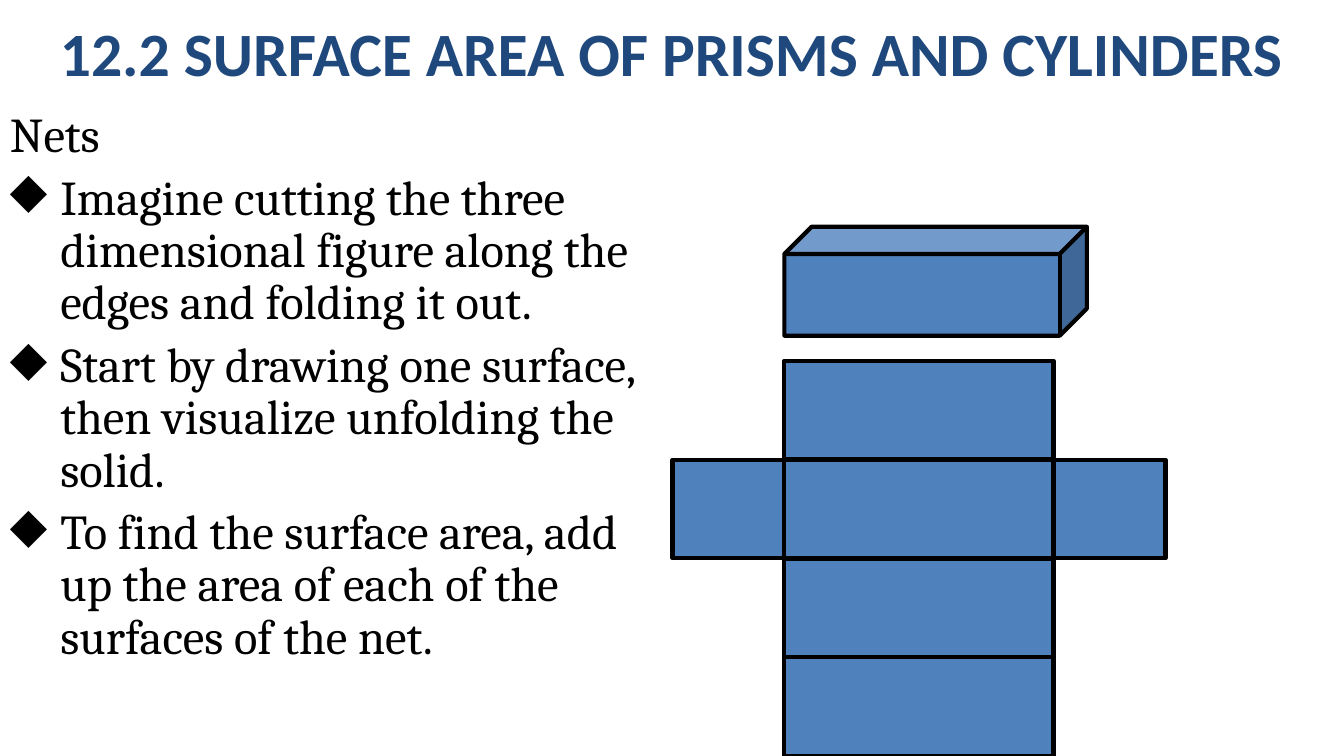
from lxml import etree
from pptx import Presentation
from pptx.dml.color import RGBColor
from pptx.enum.shapes import MSO_SHAPE as Preset
from pptx.enum.text import MSO_ANCHOR as Anchor, PP_ALIGN as Align
from pptx.oxml.ns import qn
from pptx.util import Inches, Pt

COLORS = {"title": "1F497D", "text": "000000", "face": "4F81BD", "edge": "000000"}
TITLE = "12.2 SURFACE AREA OF PRISMS AND CYLINDERS"
HEADING = "Nets"
STEPS = [
    "Imagine cutting the three dimensional figure along the edges and folding it out.",
    "Start by drawing one surface, then visualize unfolding the solid.",
    "To find the surface area, add up the area of each of the surfaces of the net.",
]


def color(name):
    """Return the named colour."""
    return RGBColor.from_string(COLORS[name])


def add_text_frame(slide, left, top, width, height):
    """Add a wrapping text box and return its text frame."""
    frame = slide.shapes.add_textbox(
        Inches(left), Inches(top), Inches(width), Inches(height)).text_frame
    frame.word_wrap = True
    return frame


def add_run(paragraph, text, font, size, color_name, bold=False):
    """Append a formatted run to a paragraph."""
    run = paragraph.add_run()
    run.text = text
    run.font.name = font
    run.font.size = Pt(size)
    run.font.bold = bold
    run.font.color.rgb = color(color_name)


def add_title(slide, left, top, width, height):
    """Place the centred slide title."""
    frame = add_text_frame(slide, left, top, width, height)
    frame.vertical_anchor = Anchor.MIDDLE
    paragraph = frame.paragraphs[0]
    paragraph.alignment = Align.CENTER
    add_run(paragraph, TITLE, "Calibri", 44, "title", bold=True)


def add_steps(slide, left, top, width, height):
    """Place the heading and the bulleted steps below it."""
    frame = add_text_frame(slide, left, top, width, height)
    for index, text in enumerate([HEADING, *STEPS]):
        paragraph = frame.add_paragraph() if index else frame.paragraphs[0]
        paragraph.line_spacing = 0.9
        properties = paragraph._p.get_or_add_pPr()
        properties.set("marL", str(Inches(0.5)))
        properties.set("indent", str(-Inches(0.5)))
        if index:
            paragraph.space_before = Pt(7)
            etree.SubElement(properties, qn("a:buChar"), char="◆")
        add_run(paragraph, text, "Cambria", 34.7, "text")


def add_solid(slide, preset, left, top, width, height):
    """Add a filled and outlined shape."""
    shape = slide.shapes.add_shape(
        preset, Inches(left), Inches(top), Inches(width), Inches(height))
    shape.shadow.inherit = False
    shape.fill.solid()
    shape.fill.fore_color.rgb = color("face")
    shape.line.color.rgb = color("edge")
    shape.line.width = Pt(3)
    return shape


def add_prism(slide, left, top, width, height):
    """Place the rectangular prism."""
    prism = add_solid(slide, Preset.CUBE, left, top, width, height)
    prism.adjustments[0] = 0.25


def add_net(slide, left, top, width, height):
    """Place the unfolded prism: four stacked faces and two side flaps."""
    flap = 1.11
    face_width, face_height = width - 2 * flap, height / 4
    for row in (0, 3, 2, 1):
        add_solid(slide, Preset.RECTANGLE, left + flap, top + row * face_height,
                  face_width, face_height)
    for flap_left in (left + width - flap, left):
        add_solid(slide, Preset.RECTANGLE, flap_left, top + face_height,
                  flap, face_height)


def main():
    """Build and save the slide."""
    presentation = Presentation()
    presentation.slide_width = Inches(13.33)
    presentation.slide_height = Inches(7.5)
    slide = presentation.slides.add_slide(presentation.slide_layouts[6])
    add_title(slide, 0, 0, 13.33, 1.03)
    add_steps(slide, 0, 1.05, 6.56, 6.03)
    add_prism(slide, 7.78, 2.25, 3, 1.08)
    add_net(slide, 6.67, 3.58, 4.89, 3.92)
    presentation.save("out.pptx")


if __name__ == "__main__":
    main()
